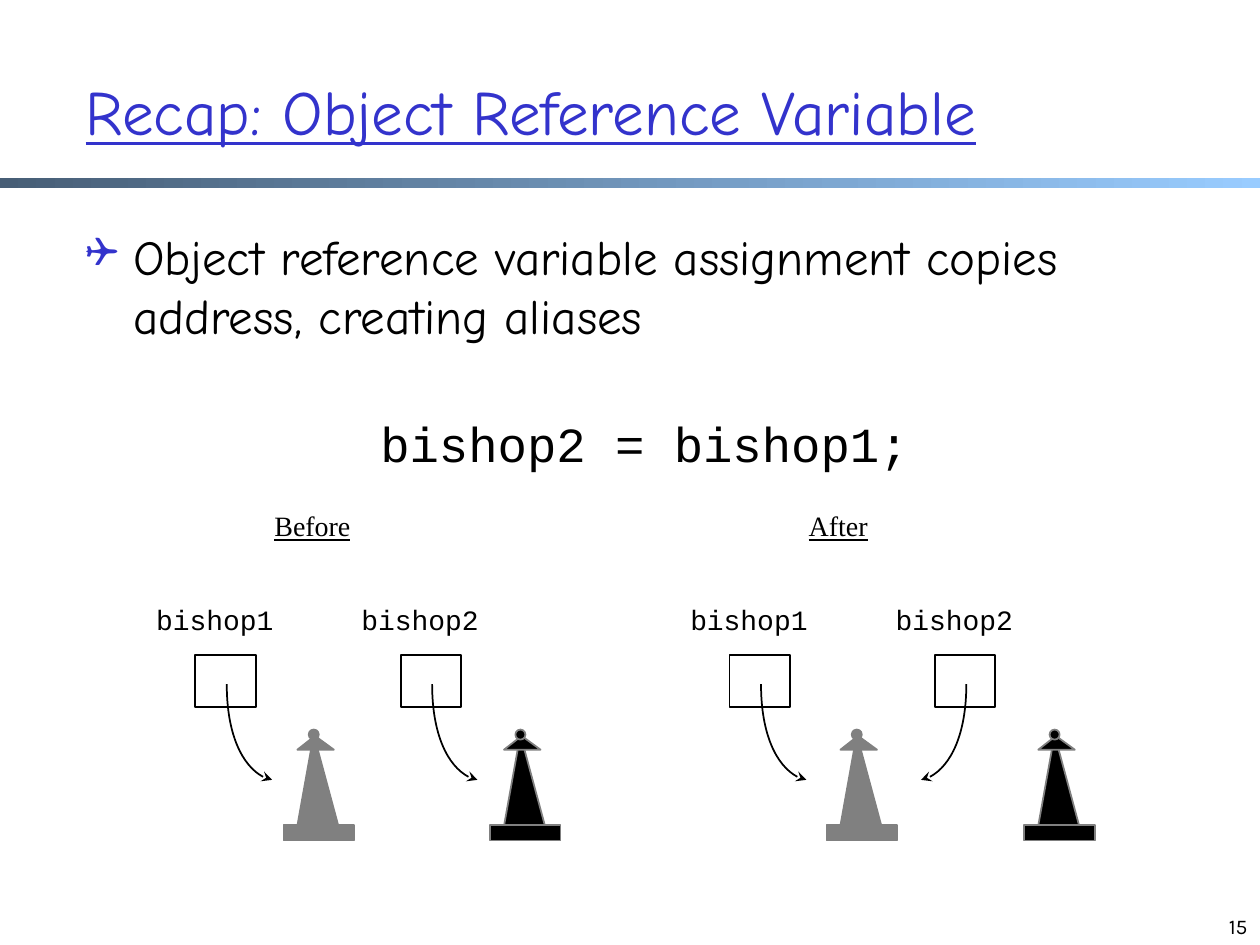
"""Build a slide showing how assigning an object reference creates an alias."""
from dataclasses import dataclass
from typing import NamedTuple

from lxml import etree
from pptx import Presentation
from pptx import util as u
from pptx.dml.color import RGBColor
from pptx.enum import shapes, text
from pptx.oxml.ns import qn

COLUMNS, ROWS = 10, 7.5
CELL = u.Inches(1)


@dataclass(frozen=True)
class Theme:
    """Colours, fonts and type sizes of the slide."""
    ink: RGBColor = RGBColor(0, 0, 0)
    accent: RGBColor = RGBColor(0x33, 0x33, 0xCC)
    gray: RGBColor = RGBColor(0x80, 0x80, 0x80)
    bar_start: RGBColor = RGBColor(0x47, 0x5E, 0x76)
    bar_end: RGBColor = RGBColor(0x99, 0xCC, 0xFF)
    body_font: str = "Comic Neue"
    code_font: str = "Courier New"
    caption_font: str = "Times New Roman"
    number_font: str = "Karla"
    bullet_font: str = "Wingdings"
    title_size: int = 36
    body_size: int = 28
    label_size: int = 16
    number_size: int = 12


class Area(NamedTuple):
    """A rectangle in grid columns and rows."""
    left: float
    top: float
    width: float
    height: float

    def emu(self) -> list[int]:
        """Return the rectangle in slide units."""
        return [round(value * CELL) for value in self]


@dataclass(frozen=True)
class Variable:
    """A reference variable, its arrow direction and the piece beside it."""
    name: str
    column: float
    piece_column: float
    piece_color: RGBColor
    direction: int = 1


@dataclass(frozen=True)
class Scene:
    """A captioned state of the two variables."""
    caption: str
    caption_area: Area
    variables: tuple[Variable, ...]


THEME = Theme()
SCENES = (
    Scene("Before", Area(2.08, 3.99, 0.82, 0.37), (
        Variable("bishop1", 1.55, 2.25, THEME.gray),
        Variable("bishop2", 3.18, 3.89, THEME.ink))),
    Scene("After", Area(6.32, 3.99, 0.68, 0.37), (
        Variable("bishop1", 5.79, 6.56, THEME.gray),
        Variable("bishop2", 7.42, 8.13, THEME.ink, -1))),
)


def style(para, font: str, size: int, color: RGBColor, underline: bool = False) -> None:
    """Set the font of a whole paragraph."""
    para.font.name = font
    para.font.size = u.Pt(size)
    para.font.color.rgb = color
    para.font.underline = underline


def add_text(page, area: Area, words: str, font: str, size: int,
             underline: bool = False, wrap: bool = False):
    """Add a text box with one styled paragraph and return its frame."""
    frame = page.shapes.add_textbox(*area.emu()).text_frame
    frame.word_wrap = wrap
    frame.text = words
    style(frame.paragraphs[0], font, size, THEME.ink, underline)
    return frame


def finish(shape, fill: RGBColor | None, line: RGBColor) -> None:
    """Give a shape a plain fill and a thin outline."""
    shape.shadow.inherit = False
    if fill is None:
        shape.fill.background()
    else:
        shape.fill.solid()
        shape.fill.fore_color.rgb = fill
    shape.line.color.rgb = line
    shape.line.width = u.Pt(1)


def add_outline(page, points: list[tuple[float, float]], close: bool):
    """Add a freeform through points given in grid units."""
    start, *rest = [(round(x * CELL), round(y * CELL)) for x, y in points]
    builder = page.shapes.build_freeform(*start)
    builder.add_line_segments(rest, close=close)
    return builder.convert_to_shape()


def add_piece(page, left: float, color: RGBColor) -> None:
    """Draw a chess piece whose base starts at the given column."""
    body = [(0.24, 5.83), (0.1, 6.61), (0.45, 6.61)]
    brim = [(0.11, 5.95), (0.4, 5.95), (0.25, 5.84)]
    for points in (body, brim):
        outline = add_outline(page, [(left + x, y) for x, y in points], True)
        finish(outline, color, THEME.gray)
    parts = ((shapes.MSO_SHAPE.RECTANGLE, Area(left, 6.55, 0.56, 0.12)),
             (shapes.MSO_SHAPE.OVAL, Area(left + 0.2, 5.79, 0.08, 0.08)))
    for kind, area in parts:
        finish(page.shapes.add_shape(kind, *area.emu()), color, THEME.gray)


def add_arrow(page, start: float, direction: int) -> None:
    """Draw a curved reference arrow down to a piece."""
    offsets = [(0, 5.43), (0, 5.83), (0.16, 6.16), (0.36, 6.19)]
    arrow = add_outline(page, [(start + direction * x, y) for x, y in offsets], False)
    finish(arrow, None, THEME.ink)
    segments = list(arrow._element.iter(qn("a:lnTo")))
    curve = etree.SubElement(segments[0].getparent(), qn("a:cubicBezTo"))
    for segment in segments:
        curve.append(segment[0])
        segment.getparent().remove(segment)
    etree.SubElement(arrow.line._get_or_add_ln(), qn("a:tailEnd"), type="stealth")


def add_variable(page, variable: Variable) -> None:
    """Draw a variable's box, label, arrow and neighbouring piece."""
    area = Area(variable.column, 5.2, 0.48, 0.41)
    box = page.shapes.add_shape(shapes.MSO_SHAPE.RECTANGLE, *area.emu())
    finish(box, None, THEME.ink)
    add_text(page, Area(variable.column - 0.41, 4.73, 1.15, 0.37),
             variable.name, THEME.code_font, THEME.label_size)
    add_piece(page, variable.piece_column, variable.piece_color)
    add_arrow(page, variable.column + 0.25, variable.direction)


def add_bar(page) -> None:
    """Draw the gradient bar below the title."""
    bar = page.shapes.add_shape(shapes.MSO_SHAPE.RECTANGLE,
                                *Area(0, 1.41, COLUMNS, 0.08).emu())
    bar.shadow.inherit = False
    bar.line.fill.background()
    bar.fill.gradient()
    bar.fill.gradient_angle = 0
    for stop, color, position in zip(bar.fill.gradient_stops,
                                     (THEME.bar_start, THEME.bar_end), (0, 1)):
        stop.color.rgb = color
        stop.position = position


def add_title(page) -> None:
    """Place and format the title placeholder."""
    title = page.shapes.title
    title.left, title.top, title.width, title.height = Area(0.58, 0.25, 9, 1.25).emu()
    frame = title.text_frame
    frame.text = "Recap: Object Reference Variable"
    frame.auto_size = text.MSO_AUTO_SIZE.NONE
    frame.vertical_anchor = text.MSO_ANCHOR.MIDDLE
    para = frame.paragraphs[0]
    para.alignment = text.PP_ALIGN.LEFT
    style(para, THEME.body_font, THEME.title_size, THEME.accent, True)


def add_body(page) -> None:
    """Add the bulleted statement and the code line below it."""
    frame = add_text(page, Area(0.58, 1.75, 8.5, 5.08),
                     "Object reference variable assignment copies address, creating aliases",
                     THEME.body_font, THEME.body_size, wrap=True)
    statement = frame.paragraphs[0]
    statement.space_before = u.Pt(5.6)
    props = statement._p.get_or_add_pPr()
    props.set("marL", str(u.Inches(0.38)))
    props.set("indent", str(-u.Inches(0.38)))
    color = etree.Element(qn("a:buClr"))
    etree.SubElement(color, qn("a:srgbClr"), val=str(THEME.accent))
    bullet = (color, etree.Element(qn("a:buSzPct"), val="85000"),
              etree.Element(qn("a:buFont"), typeface=THEME.bullet_font),
              etree.Element(qn("a:buChar"), char="❑"))
    for part in bullet:
        props.find(qn("a:defRPr")).addprevious(part)
    code = frame.add_paragraph()
    code.text = "bishop2 = bishop1;"
    code.space_before = u.Pt(39.5)
    code._p.get_or_add_pPr().set("marL", str(u.Inches(2.34)))
    style(code, THEME.code_font, THEME.body_size, THEME.ink)


def main() -> None:
    """Build and save the deck."""
    deck = Presentation()
    deck.slide_width, deck.slide_height = round(COLUMNS * CELL), round(ROWS * CELL)
    page = deck.slides.add_slide(deck.slide_layouts[5])
    add_bar(page)
    add_title(page)
    add_body(page)
    for scene in SCENES:
        add_text(page, scene.caption_area, scene.caption,
                 THEME.caption_font, THEME.label_size, underline=True)
        for variable in scene.variables:
            add_variable(page, variable)
    number = add_text(page, Area(7.67, 7, 2.33, 0.5), "15",
                      THEME.number_font, THEME.number_size, wrap=True)
    number.vertical_anchor = text.MSO_ANCHOR.BOTTOM
    number.paragraphs[0].alignment = text.PP_ALIGN.RIGHT
    deck.save("out.pptx")


if __name__ == "__main__":
    main()
